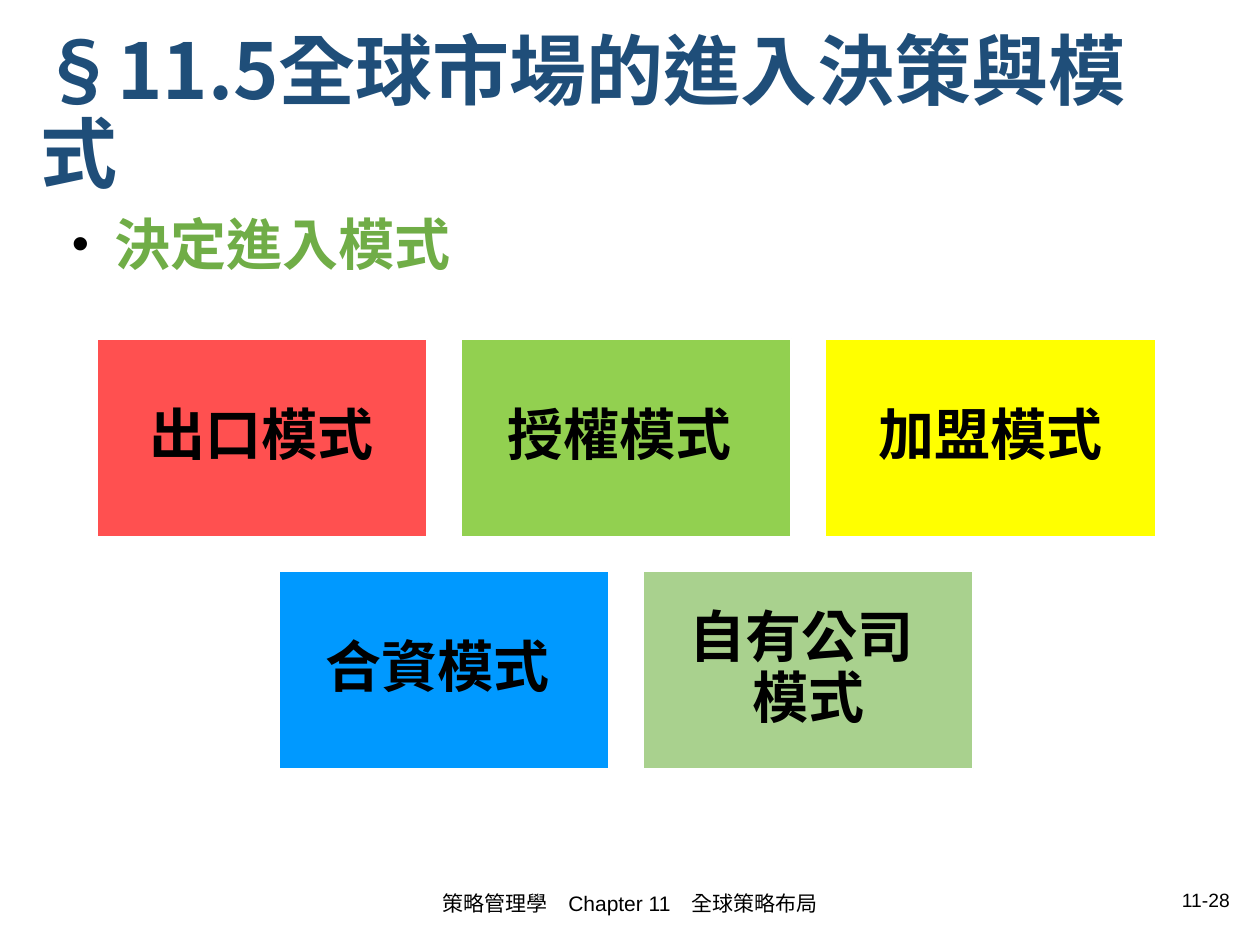
from dataclasses import dataclass

from lxml.etree import SubElement
from pptx import Presentation
from pptx.dml.color import RGBColor
from pptx.enum.shapes import MSO_SHAPE as Shape
from pptx.enum.text import MSO_ANCHOR as Anchor, MSO_AUTO_SIZE as AutoSize, PP_ALIGN as Align
from pptx.oxml.ns import qn
from pptx.util import Inches, Pt


@dataclass(frozen=True)
class Theme:
    cjk: str = "Noto Sans CJK SC"
    latin: str = "Arial"
    title: str = "1F4E79"
    accent: str = "70AD47"
    text: str = "000000"
    border: str = "FFFFFF"
    title_size: int = 44
    topic_size: int = 32
    bullet_size: int = 28
    footer_size: int = 12
    number_size: int = 11
    line_spacing: float = 0.9


@dataclass(frozen=True)
class Mode:
    label: str
    fill: str


THEME = Theme()
MODE_ROWS = [
    [Mode("出口模式", "FF5050"), Mode("授權模式 ", "92D050"), Mode("加盟模式", "FFFF00")],
    [Mode("合資模式 ", "0099FF"), Mode("自有公司 \v模式", "A9D18E")],
]
BOX_W, BOX_H, GAP = 2.62, 1.57, 0.27
GRID_CENTER, GRID_TOP = 4.97, 2.69


def add_text(p, text: str, *, size: int, color: str = THEME.text,
             font: str = THEME.cjk, bold: bool = True) -> None:
    for i, line in enumerate(text.split("\v")):
        if i:
            p.add_line_break()
        r = p.add_run()
        r.text = line
        r.font.size = Pt(size)
        r.font.bold = bold
        r.font.name = font
        r.font.color.rgb = RGBColor.from_string(color)
        rPr = r.font._element
        rPr.set("lang", "zh-TW")
        ea = SubElement(rPr, qn("a:ea"))
        ea.set("typeface", THEME.cjk)


def prepare(s, *, anchor: Anchor, align: Align, spacing: float = THEME.line_spacing):
    tf = s.text_frame
    tf.word_wrap = True
    tf.auto_size = AutoSize.NONE
    tf.vertical_anchor = anchor
    p = tf.paragraphs[0]
    p.alignment = align
    p.line_spacing = spacing
    p.space_before = Pt(0)
    return p


def place(s, left: float, top: float, width: float, height: float) -> None:
    s.left, s.top = Inches(left), Inches(top)
    s.width, s.height = Inches(width), Inches(height)


def add_bullet(p, char: str, indent: float) -> None:
    pPr = p._p.get_or_add_pPr()
    pPr.set("marL", str(Inches(indent)))
    pPr.set("indent", str(-Inches(indent)))
    SubElement(pPr, qn("a:buFont")).set("typeface", THEME.latin)
    SubElement(pPr, qn("a:buChar")).set("char", char)


def add_mode(slide, mode: Mode, left: float, top: float) -> None:
    s = slide.shapes.add_shape(Shape.RECTANGLE, Inches(left), Inches(top),
                               Inches(BOX_W), Inches(BOX_H))
    s.shadow.inherit = False
    s.fill.solid()
    s.fill.fore_color.rgb = RGBColor.from_string(mode.fill)
    s.line.color.rgb = RGBColor.from_string(THEME.border)
    s.line.width = Pt(1)
    tf = s.text_frame
    tf.margin_left = tf.margin_right = tf.margin_top = tf.margin_bottom = Inches(0.13)
    p = prepare(s, anchor=Anchor.MIDDLE, align=Align.CENTER)
    add_text(p, mode.label, size=THEME.topic_size)


def add_footer(slide, text: str, box: tuple, align: Align, size: int) -> None:
    s = slide.shapes.add_textbox(*map(Inches, box))
    p = prepare(s, anchor=Anchor.MIDDLE, align=align, spacing=1.0)
    add_text(p, text, size=size, font=THEME.latin, bold=False)


def main() -> None:
    prs = Presentation()
    prs.slide_width, prs.slide_height = Inches(10), Inches(7.5)
    slide = prs.slides.add_slide(prs.slide_layouts[1])

    add_footer(slide, "策略管理學　Chapter 11　全球策略布局",
               (3.31, 6.97, 3.38, 0.4), Align.CENTER, THEME.footer_size)
    add_footer(slide, "11-28", (7.06, 6.99, 2.8, 0.3), Align.RIGHT, THEME.number_size)

    title = slide.shapes.title
    place(title, 0.22, 0.51, 9.12, 0.82)
    p = prepare(title, anchor=Anchor.MIDDLE, align=Align.LEFT)
    add_text(p, "§11.5全球市場的進入決策與模式", size=THEME.title_size, color=THEME.title)

    body = slide.placeholders[1]
    place(body, 0.47, 1.67, 8.31, 4.95)
    add_bullet(body.text_frame.paragraphs[0], "•", 0.25)
    p = prepare(body, anchor=Anchor.TOP, align=Align.LEFT)
    add_text(p, " ", size=THEME.bullet_size)
    add_text(p, "決定進入模式", size=THEME.topic_size, color=THEME.accent)

    for row, modes in enumerate(MODE_ROWS):
        row_width = len(modes) * (BOX_W + GAP) - GAP
        for col, mode in enumerate(modes):
            left = GRID_CENTER - row_width / 2 + col * (BOX_W + GAP)
            add_mode(slide, mode, left, GRID_TOP + row * (BOX_H + GAP))

    prs.save("out.pptx")


if __name__ == "__main__":
    main()
